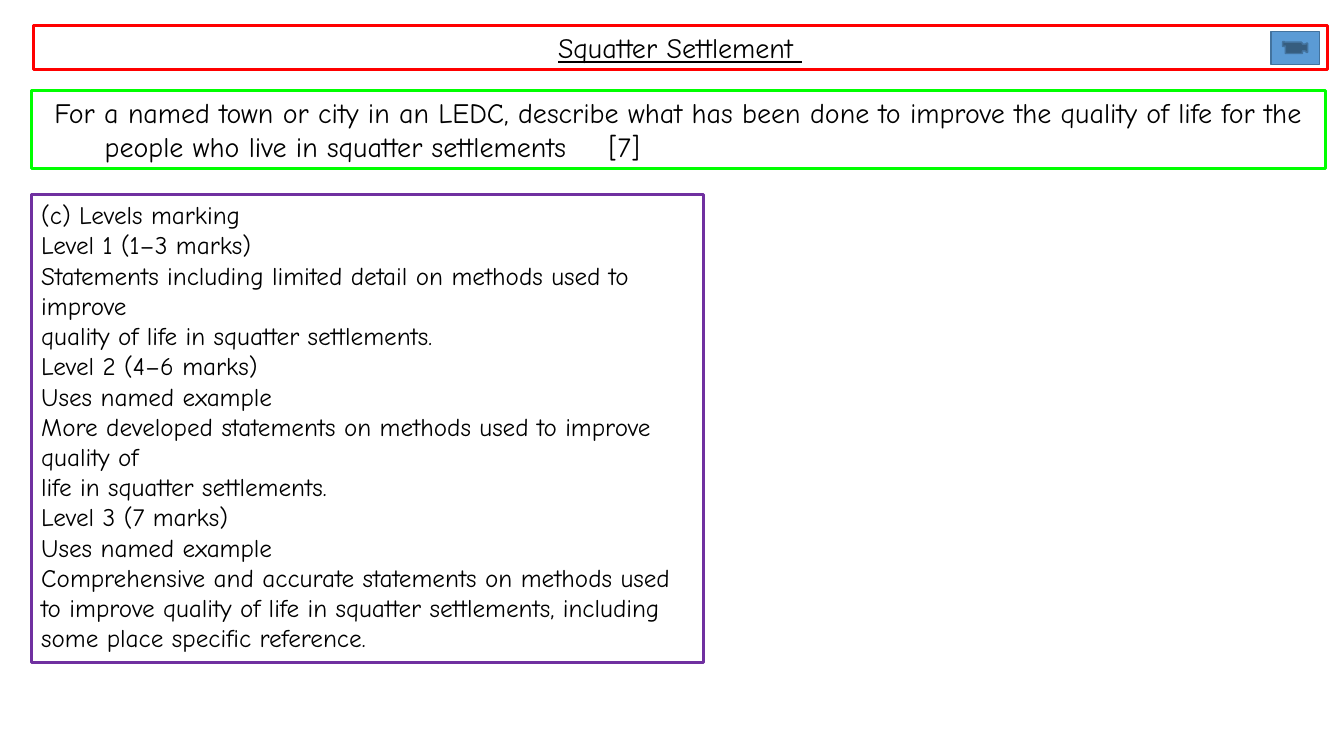
from dataclasses import dataclass

from lxml import etree
from pptx import Presentation
from pptx.dml.color import RGBColor
from pptx.enum import shapes, text
from pptx.oxml import ns
from pptx.util import Cm, Pt


@dataclass(frozen=True)
class Theme:
    font: str = "Comic Neue"
    heading: int = 20
    body: int = 18
    border: float = 2.25
    ink: str = "000000"
    title: str = "FF0000"
    question: str = "00FF00"
    levels: str = "7030A0"
    button: str = "5B9BD5"
    button_line: str = "43739E"


THEME = Theme()
LEVELS = [
    "(c) Levels marking",
    "Level 1 (1–3 marks)",
    "Statements including limited detail on methods used to improve",
    "quality of life in squatter settlements.",
    "Level 2 (4–6 marks)",
    "Uses named example",
    "More developed statements on methods used to improve quality of",
    "life in squatter settlements.",
    "Level 3 (7 marks)",
    "Uses named example",
    "Comprehensive and accurate statements on methods used to improve quality "
    "of life in squatter settlements, including some place specific reference.",
]


def framed_text(s, box, lines, color, size):
    sp = s.shapes.add_textbox(*map(Cm, box))
    sp.line.color.rgb = RGBColor.from_string(color)
    sp.line.width = Pt(THEME.border)
    tf = sp.text_frame
    tf.word_wrap = True
    tf.auto_size = text.MSO_AUTO_SIZE.SHAPE_TO_FIT_TEXT
    tf.text = "\n".join(lines)
    for p in tf.paragraphs:
        p.font.name = THEME.font
        p.font.size = Pt(size)
        p.font.color.rgb = RGBColor.from_string(THEME.ink)
    return tf


def title_bar(s, box):
    left, top, width, height = box
    sp = s.shapes.add_shape(
        shapes.MSO_SHAPE.ACTION_BUTTON_MOVIE,
        Cm(left + width - 1.42), Cm(top + 0.15), Cm(1.22), Cm(0.84))
    sp.shadow.inherit = False
    sp.fill.solid()
    sp.fill.fore_color.rgb = RGBColor.from_string(THEME.button)
    sp.line.color.rgb = RGBColor.from_string(THEME.button_line)
    sp.line.width = Pt(1)
    tf = framed_text(s, box, ["Squatter Settlement "], THEME.title, THEME.heading)
    p = tf.paragraphs[0]
    p.alignment = text.PP_ALIGN.CENTER
    p.font.underline = True


def question_box(s, box):
    question = ("For a named town or city in an LEDC, describe what has been done "
                "to improve the quality of life for the people who live in "
                "squatter settlements\t[7]")
    tf = framed_text(s, box, [question], THEME.question, THEME.heading)
    pPr = tf.paragraphs[0]._p.get_or_add_pPr()
    pPr.set("marL", str(Cm(1.6)))
    pPr.set("indent", str(Cm(-1.27)))
    tabs = etree.Element(ns.qn("a:tabLst"))
    etree.SubElement(tabs, ns.qn("a:tab"), pos=str(Cm(box[2] - 2.91)), algn="l")
    pPr.insert(0, tabs)


def levels_box(s, box):
    framed_text(s, box, LEVELS, THEME.levels, THEME.body)


def main():
    prs = Presentation()
    prs.slide_width, prs.slide_height = Cm(33.87), Cm(19.05)
    s = prs.slides.add_slide(prs.slide_layouts[6])
    title_bar(s, (0.84, 0.64, 32.61, 1.12))
    levels_box(s, (0.79, 4.9, 16.94, 11.79))
    question_box(s, (0.79, 2.29, 32.61, 1.96))
    prs.save("out.pptx")


if __name__ == "__main__":
    main()
